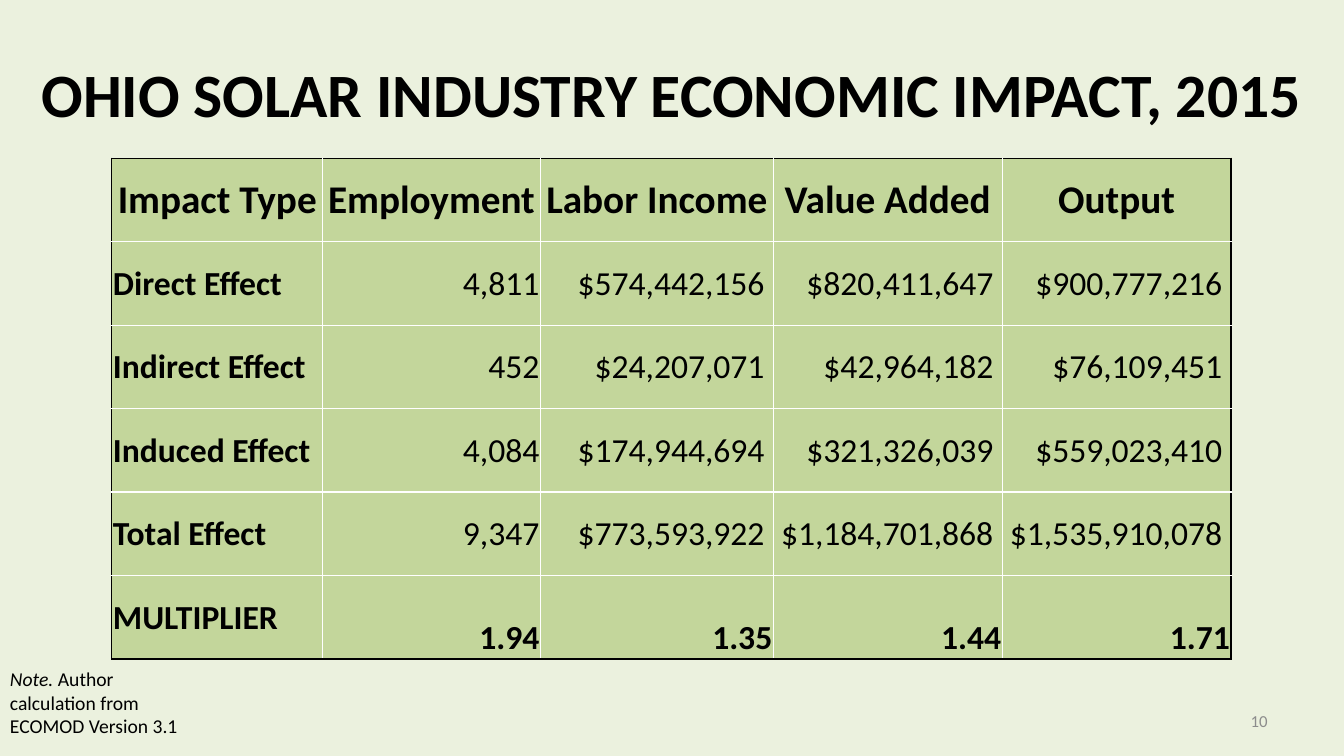
"""Build the slide on the economic impact of Ohio's solar industry."""
from lxml.etree import SubElement
from pptx import Presentation
from pptx.dml.color import RGBColor
from pptx.enum.text import MSO_ANCHOR as Anchor, PP_ALIGN as Align
from pptx.oxml.ns import qn
from pptx.util import Inches, Pt

TITLE = "OHIO SOLAR INDUSTRY ECONOMIC IMPACT, 2015"
IMPACTS = [
    ("Impact Type", "Employment", "Labor Income", "Value Added", "Output"),
    ("Direct Effect", "4,811", "$574,442,156 ", "$820,411,647 ", "$900,777,216 "),
    ("Indirect Effect", "452", "$24,207,071 ", "$42,964,182 ", "$76,109,451 "),
    ("Induced Effect", "4,084", "$174,944,694 ", "$321,326,039 ", "$559,023,410 "),
    ("Total Effect", "9,347", "$773,593,922 ", "$1,184,701,868 ", "$1,535,910,078 "),
    ("MULTIPLIER", "1.94", "1.35", "1.44", "1.71"),
]
NOTE = [("Note. ", True), ("Author calculation from ECOMOD Version 3.1", False)]
PAGE_NUMBER = "10"

WIDTH, HEIGHT = 13.33, 7.5
TABLE_LEFT, TABLE_TOP, TABLE_HEIGHT = 1.11, 1.57, 4.97
COLUMN_WIDTHS = [2.09, 2.16, 2.31, 2.27, 2.27]
CELL_MARGIN = 0.01

BACKGROUND = RGBColor(0xEB, 0xF1, 0xDE)
CELL_GREEN = RGBColor(0xC3, 0xD6, 0x9B)
BLACK = RGBColor(0, 0, 0)
WHITE = RGBColor(255, 255, 255)
GREY = RGBColor(0x8C, 0x8C, 0x8C)


def add_text(frame, text, size=24, color=BLACK, bold=False, italic=False, align=Align.LEFT):
    para = frame.paragraphs[0]
    para.alignment = align
    span = para.add_run()
    span.text = text
    font = span.font
    font.name, font.size, font.bold, font.italic = "Calibri", Pt(size), bold, italic
    font.color.rgb = color


def add_box(page, left, top, width, height, anchor=Anchor.TOP):
    box = page.shapes.add_textbox(*map(Inches, (left, top, width, height)))
    frame = box.text_frame
    frame.word_wrap = True
    frame.vertical_anchor = anchor
    return frame


def set_borders(cell, outer_edges):
    properties = cell._tc.get_or_add_tcPr()
    for position, edge in enumerate("LRTB"):
        line = SubElement(properties, qn(f"a:ln{edge}"), w=str(Pt(1)))
        fill = SubElement(line, qn("a:solidFill"))
        SubElement(fill, qn("a:srgbClr"), val=str(BLACK if edge in outer_edges else WHITE))
        properties.insert(position, line)


def format_cell(cell, text, row, column):
    last_row, last_column = len(IMPACTS) - 1, len(COLUMN_WIDTHS) - 1
    header, label, multiplier = row == 0, column == 0, row == last_row
    cell.margin_left = cell.margin_right = cell.margin_top = Inches(CELL_MARGIN)
    cell.margin_bottom = 0
    cell.vertical_anchor = Anchor.BOTTOM if multiplier and not label else Anchor.MIDDLE
    cell.fill.solid()
    cell.fill.fore_color.rgb = CELL_GREEN
    align = Align.CENTER if header else Align.LEFT if label else Align.RIGHT
    add_text(cell.text_frame, text, size=28 if header else 24,
             bold=header or label or multiplier, align=align)
    outer = {"L": label, "R": column == last_column, "T": header, "B": multiplier}
    set_borders(cell, [edge for edge, is_outer in outer.items() if is_outer])


def add_impact_table(page):
    table = page.shapes.add_table(
        len(IMPACTS), len(COLUMN_WIDTHS), Inches(TABLE_LEFT), Inches(TABLE_TOP),
        Inches(sum(COLUMN_WIDTHS)), Inches(TABLE_HEIGHT)).table
    for column, width in zip(table.columns, COLUMN_WIDTHS):
        column.width = Inches(width)
    for row, values in enumerate(IMPACTS):
        for column, text in enumerate(values):
            format_cell(table.cell(row, column), text, row, column)


def main():
    deck = Presentation()
    deck.slide_width, deck.slide_height = Inches(WIDTH), Inches(HEIGHT)
    page = deck.slides.add_slide(deck.slide_layouts[5])
    page.background.fill.solid()
    page.background.fill.fore_color.rgb = BACKGROUND

    title = page.shapes.title
    title.left, title.top = 0, Inches(0.3)
    title.width, title.height = deck.slide_width, Inches(1.25)
    title.text_frame.vertical_anchor = Anchor.MIDDLE
    add_text(title.text_frame, TITLE, size=44, bold=True, align=Align.CENTER)

    add_impact_table(page)

    number = add_box(page, 9.56, 6.95, 3.11, 0.4, anchor=Anchor.MIDDLE)
    add_text(number, PAGE_NUMBER, size=12, color=GREY, align=Align.RIGHT)

    note = add_box(page, 0, 6.57, 2.02, 0.81)
    for text, italic in NOTE:
        add_text(note, text, size=14, italic=italic)

    deck.save("out.pptx")


if __name__ == "__main__":
    main()
